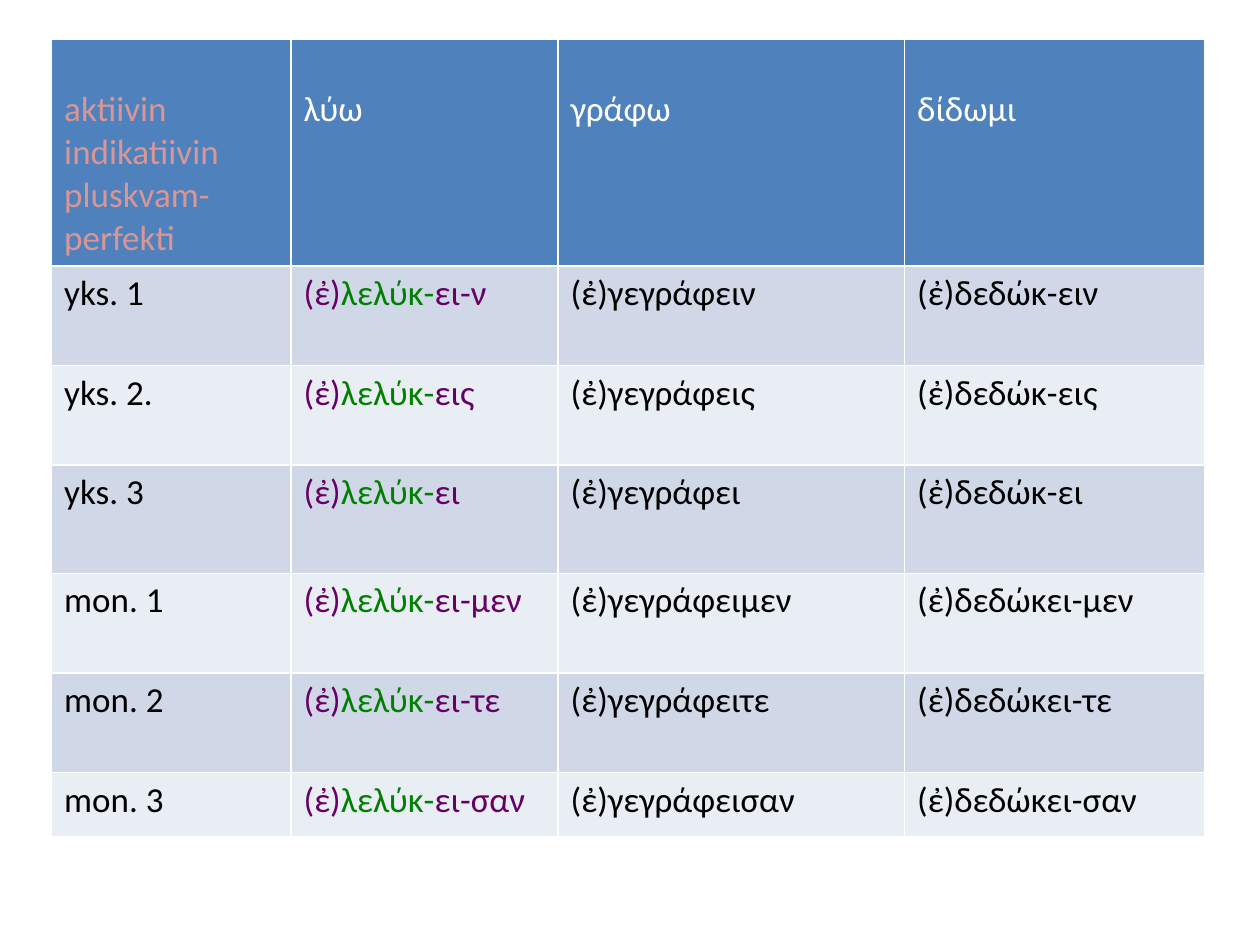
from lxml import etree
from pptx import Presentation
from pptx.dml.color import RGBColor
from pptx.oxml.ns import qn
from pptx.util import Inches, Pt

COLORS = {
    "header": "4F81BD", "odd": "D0D8E8", "even": "E9EDF4", "white": "FFFFFF",
    "title": "D99694", "ending": "660066", "stem": "008000", "text": "000000",
}
FONT = {"name": "Calibri", "size": Pt(20), "bold": False}
COLS = [1.9, 2.12, 2.75, 2.38]
ROWS = [1.8, 0.79, 0.79, 0.86, 0.79, 0.79, 0.51]
LEFT, TOP = 0.41, 0.31
HEADER_MARGIN = 0.39  # leaves one text line free above the headings

HEADINGS = ["aktiivin indikatiivin pluskvam-perfekti", "λύω", "γράφω", "δίδωμι"]
# person, ending of λύω, form of γράφω, form of δίδωμι
FORMS = [
    ("yks. 1", "ει-ν", "γεγράφειν", "δεδώκ-ειν"),
    ("yks. 2.", "εις", "γεγράφεις", "δεδώκ-εις"),
    ("yks. 3", "ει", "γεγράφει", "δεδώκ-ει"),
    ("mon. 1", "ει-μεν", "γεγράφειμεν", "δεδώκει-μεν"),
    ("mon. 2", "ει-τε", "γεγράφειτε", "δεδώκει-τε"),
    ("mon. 3", "ει-σαν", "γεγράφεισαν", "δεδώκει-σαν"),
]
AUGMENT, STEM = "(ἐ)", "λελύκ-"


def add_borders(cell, color, width):
    tc_pr = cell._tc.get_or_add_tcPr()
    for side in "LRTB":
        ln = etree.SubElement(tc_pr, qn(f"a:ln{side}"), w=str(Pt(width)))
        fill = etree.SubElement(ln, qn("a:solidFill"))
        etree.SubElement(fill, qn("a:srgbClr"), val=COLORS[color])


def fill_cell(cell, runs, fill):
    """Write (text, color) runs into a bordered, filled cell."""
    add_borders(cell, "white", 1)
    cell.fill.solid()
    cell.fill.fore_color.rgb = RGBColor.from_string(COLORS[fill])
    p = cell.text_frame.paragraphs[0]
    for text, color in runs:
        r = p.add_run()
        r.text = text
        for key, value in FONT.items():
            setattr(r.font, key, value)
        r.font.color.rgb = RGBColor.from_string(COLORS[color])


def add_grid(s):
    frame = s.shapes.add_table(len(ROWS), len(COLS), Inches(LEFT), Inches(TOP),
                               Inches(sum(COLS)), Inches(sum(ROWS)))
    table = frame.table
    table.first_row = table.horz_banding = False
    for column, width in zip(table.columns, COLS):
        column.width = Inches(width)
    for row, height in zip(table.rows, ROWS):
        row.height = Inches(height)
    return table


def fill_header(table):
    for c, heading in enumerate(HEADINGS):
        cell = table.cell(0, c)
        cell.margin_top = Inches(HEADER_MARGIN)
        fill_cell(cell, [(heading, "white" if c else "title")], "header")


def fill_forms(table):
    for i, (person, ending, grapho, didomi) in enumerate(FORMS, start=1):
        cells = [
            [(person, "text")],
            [(AUGMENT, "ending"), (STEM, "stem"), (ending, "ending")],
            [(AUGMENT + grapho, "text")],
            [(AUGMENT + didomi, "text")],
        ]
        for c, runs in enumerate(cells):
            fill_cell(table.cell(i, c), runs, "odd" if i % 2 else "even")


def main():
    prs = Presentation()
    prs.slide_width, prs.slide_height = Inches(10), Inches(7.5)
    s = prs.slides.add_slide(prs.slide_layouts[6])

    # Conjugation table
    table = add_grid(s)
    fill_header(table)
    fill_forms(table)

    prs.save("out.pptx")


if __name__ == "__main__":
    main()
